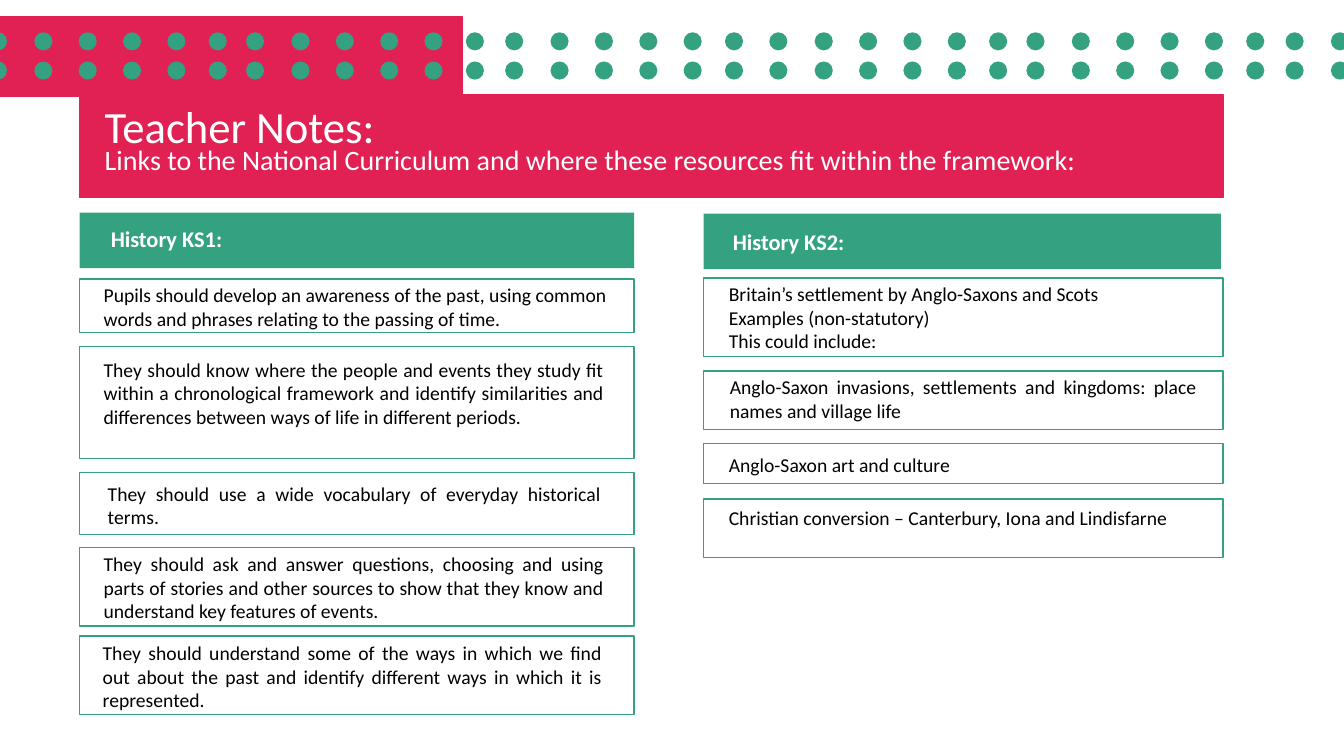
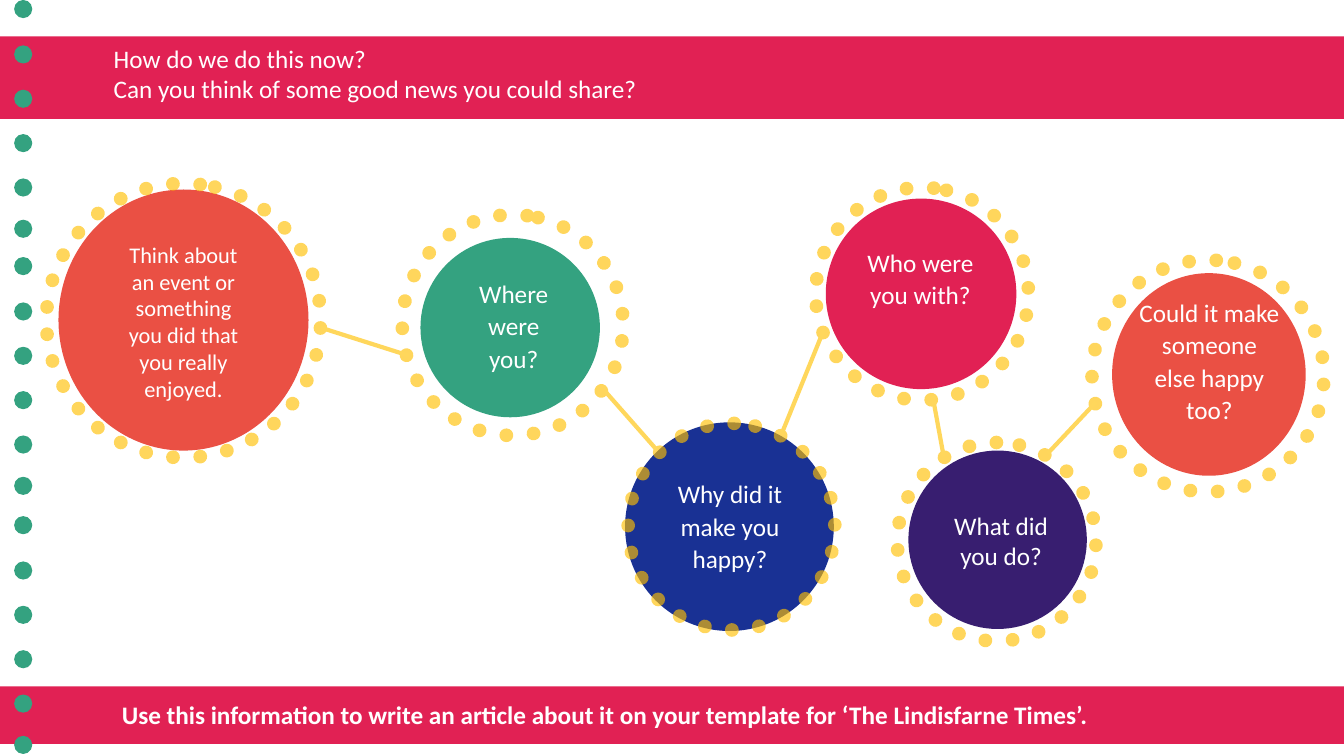
import itertools
import pptx
import pptx.util
import pptx.dml.color
import pptx.enum.shapes
import pptx.enum.text
import pptx.oxml.ns
from lxml import etree

# Shared style: 100 px to the inch
PX = 9144
WIDE, HIGH = 1333, 750
FONT = "Calibri"
RED, GREEN, CORAL = "E12154", "34A280", "EA5044"
BLUE, PLUM, GOLD, SAND = "193194", "381E70", "FFC000", "FFD75C"
WHITE, BLACK = "FFFFFF", "000000"
STEPS = [45, 44, 44, 44, 41, 37, 45, 44, 44, 44, 41, 39, 45, 44, 44, 44, 41]
RUN = [0, *itertools.accumulate(STEPS)]
SPAN = RUN[-1] + 44
DOT = 18

SHAPE = pptx.enum.shapes.MSO_SHAPE
ALIGN = pptx.enum.text.PP_ALIGN

# Content: slide 1
TITLE = [
    ("Teacher Notes:", 31.9),
    ("Links to the National Curriculum and where these resources fit "
     "within the framework:", 20),
]
# Heading: bar, text place, words
HEADS = [
    ((79, 211, 550, 55), (100, 218, 322, 37), "History KS1:"),
    ((698, 212, 513, 55), (717, 221, 322, 37), "History KS2:"),
]
# Row: frame, text place, lines, justified
ROWS = [
    ((79, 277, 550, 53), (93, 276, 544, 57),
     ["Pupils should develop an awareness of the past, using common words "
      "and phrases relating to the passing of time."], False),
    ((79, 344, 550, 111), (93, 350, 516, 104),
     ["They should know where the people and events they study fit within a "
      "chronological framework and identify similarities and differences "
      "between ways of life in different periods."], True),
    ((79, 469, 550, 61), (97, 473, 509, 57),
     ["They should use a wide vocabulary of everyday historical terms."], True),
    ((79, 543, 550, 78), (93, 543, 516, 81),
     ["They should ask and answer questions, choosing and using parts of "
      "stories and other sources to show that they know and understand key "
      "features of events."], True),
    ((79, 631, 550, 78), (92, 631, 515, 81),
     ["They should understand some of the ways in which we find out about the "
      "past and identify different ways in which it is represented."], True),
    ((698, 276, 515, 78), (713, 275, 500, 101),
     ["Britain’s settlement by Anglo-Saxons and Scots",
      "Examples (non-statutory)", "This could include:"], True),
    ((698, 368, 515, 58), (714, 367, 483, 57),
     ["Anglo-Saxon invasions, settlements and kingdoms: place names and "
      "village life"], True),
    ((698, 440, 515, 40), (713, 444, 483, 34),
     ["Anglo-Saxon art and culture"], True),
    ((698, 495, 515, 58), (713, 497, 483, 57),
     ["Christian conversion – Canterbury, Iona and Lindisfarne"], True),
]

# Content: slide 2
ASK = ["How do we do this now?",
       "Can you think of some good news you could share?"]
TASK = ("Use this information to write an article about it on your template "
        "for ‘The Lindisfarne Times’.")
# Bubble: disc, ring (left, top, size), colour, text place, words, size, spacing
NODES = [
    ((58, 188, 248, 259), (46, 182, 272), CORAL, (111, 234, 142, 172),
     "Think about an event or something you did that you really enjoyed.",
     16, 1),
    ((417, 236, 178, 178), (399, 213, 219), GREEN, (452, 269, 115, 107),
     "Where were you?", 18, 1.07),
    ((620, 419, 207, 207), (623, 420, 205), BLUE, (633, 468, 182, 107),
     "Why did it make you happy?", 18, 1.07),
    ((819, 197, 189, 189), (809, 186, 211), RED, (848, 238, 130, 107),
     "Who were you with?", 18, 1.07),
    ((901, 447, 177, 177), (890, 439, 197), PLUM, (933, 501, 120, 71),
     "What did you do?", 18, 1),
    ((1103, 271, 192, 201), (1083, 258, 230), CORAL, (1120, 288, 159, 172),
     "Could it make someone else happy too?", 18, 1.07),
]
LINKS = [(318, 325, 406, 353), (600, 388, 652, 447), (775, 431, 818, 325),
         (925, 393, 936, 453), (1039, 450, 1087, 399)]


# Helpers
def emu(vals):
    return [v * PX for v in vals]


def rgb(hue):
    return pptx.dml.color.RGBColor.from_string(hue)


def shape(host, kind, box, fill=None, line=None, width=1):
    item = host.shapes.add_shape(kind, *emu(box))
    item.shadow.inherit = False
    if fill:
        item.fill.solid()
        item.fill.fore_color.rgb = rgb(fill)
    else:
        item.fill.background()
    if line:
        item.line.color.rgb = rgb(line)
        item.line.width = pptx.util.Pt(width)
    else:
        item.line.fill.background()
    return item


def text(page, box, lines, size, hue=WHITE, align=ALIGN.LEFT, bold=False,
         space=1):
    frame = page.shapes.add_textbox(*emu(box)).text_frame
    frame.word_wrap = True
    frame.text = "\n".join(lines)
    for para in frame.paragraphs:
        para.alignment = align
        para.line_spacing = space
        for run in para.runs:
            run.font.name = FONT
            run.font.size = pptx.util.Pt(size)
            run.font.bold = bold
            run.font.color.rgb = rgb(hue)
    return frame


def dots(page, spots):
    group = page.shapes.add_group_shape()
    for x, y in spots:
        shape(group, SHAPE.OVAL, (x, y, DOT, DOT), GREEN)


def ring(page, x, y, size):
    item = shape(page, SHAPE.OVAL, (x, y, size, size), None, GOLD, 9.75)
    item.rotation = 103.2
    item.line.dash_style = pptx.enum.dml.MSO_LINE.ROUND_DOT
    qn = pptx.oxml.ns.qn
    edge = item.line._get_or_add_ln()
    edge.set("cap", "rnd")
    etree.SubElement(edge.find(".//" + qn("a:srgbClr")), qn("a:alpha"),
                     val="64000")


def link(page, ends):
    kind = pptx.enum.shapes.MSO_CONNECTOR.STRAIGHT
    item = page.shapes.add_connector(kind, *emu(ends))
    item.line.color.rgb = rgb(SAND)
    item.line.width = pptx.util.Pt(3)
    etree.SubElement(item._element.spPr, pptx.oxml.ns.qn("a:effectLst"))


# Slides
def notes(page):
    shape(page, SHAPE.RECTANGLE, (79, 94, 1134, 102), RED, RED)
    shape(page, SHAPE.RECTANGLE, (0, 17, 459, 79), RED, RED)
    cols = [x - 11 for x in RUN + [SPAN + x for x in RUN]]
    for y in (32, 61):
        dots(page, [(x, y) for x in cols if x < WIDE])

    frame = text(page, (94, 108, 1150, 80), [t for t, _ in TITLE], 20,
                 space=0.7)
    for para, (_, size) in zip(frame.paragraphs, TITLE):
        para.runs[0].font.size = pptx.util.Pt(size)

    for bar, spot, word in HEADS:
        shape(page, SHAPE.RECTANGLE, bar, GREEN)
        text(page, spot, [word], 16, bold=True)
    for box, spot, lines, just in ROWS:
        shape(page, SHAPE.RECTANGLE, box, None, GREEN)
        text(page, spot, lines, 14, BLACK,
             ALIGN.JUSTIFY if just else ALIGN.LEFT)


def story(page):
    shape(page, SHAPE.RECTANGLE, (0, 36, WIDE, 82), RED)
    shape(page, SHAPE.RECTANGLE, (0, 681, WIDE, 57), RED)
    dots(page, [(14, y) for y in RUN])
    text(page, (103, 38, 1000, 80), ASK, 18)
    text(page, (111, 689, 1159, 40), [TASK], 18, bold=True)

    for disc, halo, hue, spot, words, size, space in NODES:
        shape(page, SHAPE.OVAL, disc, hue)
        ring(page, *halo)
        text(page, spot, [words], size, align=ALIGN.CENTER, space=space)
    for ends in LINKS:
        link(page, ends)


def main():
    deck = pptx.Presentation()
    deck.slide_width, deck.slide_height = emu((WIDE, HIGH))
    for build in (notes, story):
        build(deck.slides.add_slide(deck.slide_layouts[6]))
    deck.save("out.pptx")


if __name__ == "__main__":
    import pptx.enum.dml
    main()
